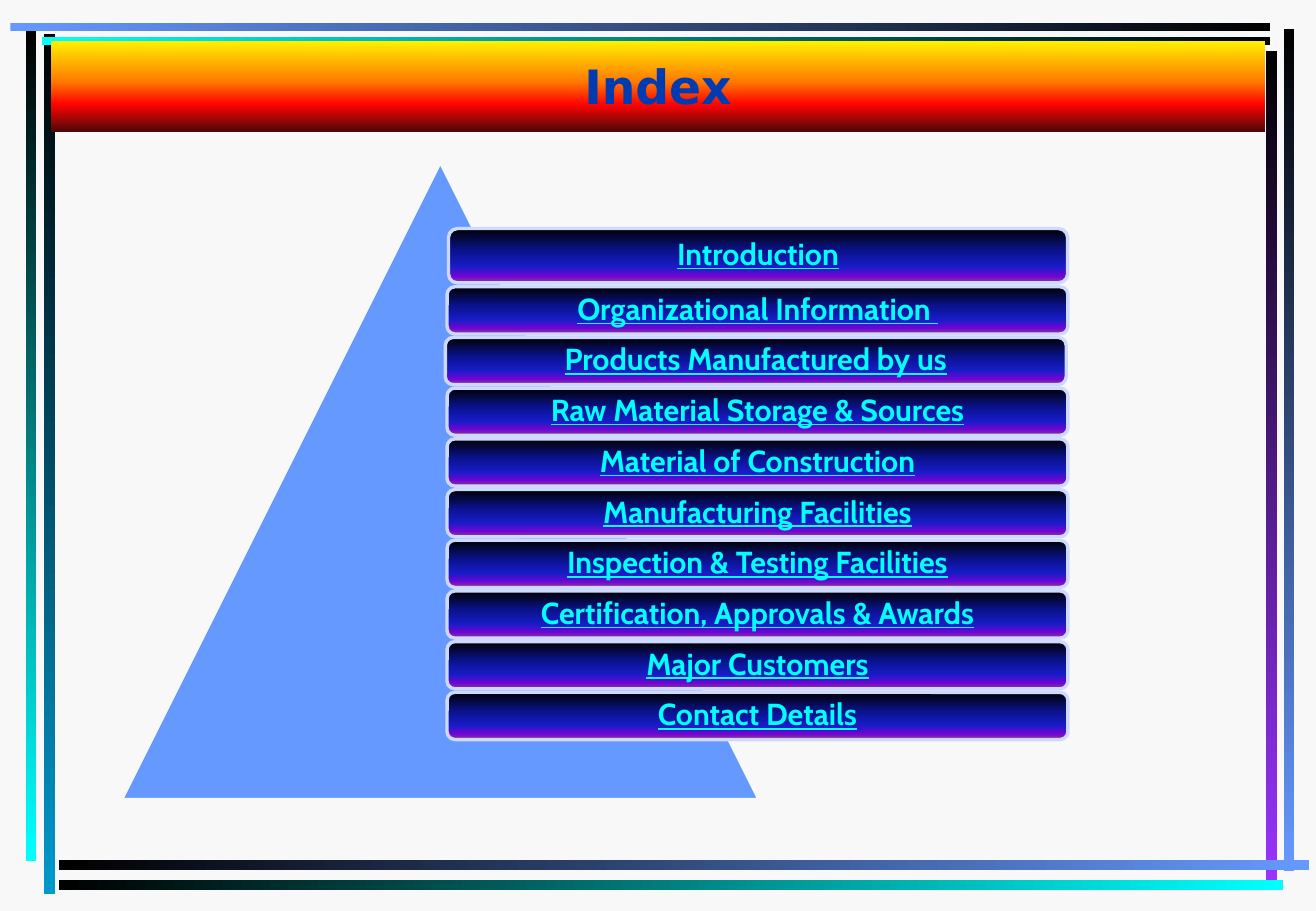
from lxml.etree import SubElement
from pptx import Presentation
from pptx.dml.color import RGBColor
from pptx.enum.shapes import MSO_SHAPE as SHAPE
from pptx.enum.text import MSO_ANCHOR, PP_ALIGN
from pptx.oxml.ns import qn
from pptx.util import Pt

DOWN, ACROSS = 270, 0
MARGIN_SIDES = ("margin_left", "margin_top", "margin_right", "margin_bottom")


def add_panel(kind, box, stops, angle=DOWN, border=None):
    """Add a shape filled with (position, colour) stops, or plainly if there is only one."""
    panel = slide.shapes.add_shape(kind, *[Pt(length) for length in box])
    panel.shadow.inherit = False
    if len(stops) == 1:
        panel.fill.solid()
        panel.fill.fore_color.rgb = RGBColor.from_string(stops[0][1])
    else:
        panel.fill.gradient()
        panel.fill.gradient_angle = angle
        stop_list = panel._element.spPr.find(qn("a:gradFill")).find(qn("a:gsLst"))
        for old_stop in list(stop_list):
            stop_list.remove(old_stop)
        for position, colour in stops:
            stop = SubElement(stop_list, qn("a:gs"), pos=str(position * 1000))
            SubElement(stop, qn("a:srgbClr"), val=colour)
    if border:
        panel.line.color.rgb = RGBColor.from_string(border)
        panel.line.width = Pt(2)
    else:
        panel.line.fill.background()
    return panel


def write_centred(panel, text, colour, line_spacing, font_format):
    frame = panel.text_frame
    frame.word_wrap = True
    frame.vertical_anchor = MSO_ANCHOR.MIDDLE
    for side in MARGIN_SIDES:
        setattr(frame, side, Pt(5))
    paragraph = frame.paragraphs[0]
    paragraph.alignment = PP_ALIGN.CENTER
    paragraph.line_spacing = line_spacing
    run = paragraph.add_run()
    run.text = text
    run.font.color.rgb = RGBColor.from_string(colour)
    for attribute, value in font_format.items():
        setattr(run.font, attribute, value)


prs = Presentation()
prs.slide_width, prs.slide_height = Pt(780), Pt(540)
slide = prs.slides.add_slide(prs.slide_layouts[6])
slide.background.fill.solid()
slide.background.fill.fore_color.rgb = RGBColor.from_string("F8F8F8")

# Frame of coloured bars
frame_bars = [
    ((26, 20, 6.5, 510), "000000", "0099CC", DOWN),
    ((15.2, 18, 6.2, 492.5), "000000", "00FFFF", DOWN),
    ((761, 17.2, 6, 499), "000000", "6699FF", DOWN),
    ((750.4, 30.2, 6.5, 492), "000000", "9933FF", DOWN),
    ((35, 510, 741.2, 5.8), "000000", "6699FF", ACROSS),
    ((35, 521.7, 725.2, 6), "000000", "00FFFF", ACROSS),
    ((25, 22, 727.8, 4.7), "00FFFF", "000000", ACROSS),
    ((6.2, 13.6, 746.5, 4.9), "6699FF", "000000", ACROSS),
]
for box, start, end, angle in frame_bars:
    add_panel(SHAPE.RECTANGLE, box, [(0, start), (100, end)], angle)

# Title band
title = add_panel(SHAPE.RECTANGLE, (30, 24, 720, 54),
                  [(0, "FFF200"), (45, "FF7A00"), (70, "FF0300"), (100, "4D0808")])
write_centred(title, "Index", "003BB2", 1.0,
              {"name": "DejaVu Sans", "size": Pt(28), "bold": True})

# Pyramid with the list of topics
add_panel(SHAPE.ISOSCELES_TRIANGLE, (72, 96, 378, 378), [(0, "6699FF")], border="F8F8F8")

TOPIC_STOPS = [(0, "000000"), (40, "0A128C"), (70, "181CC7"), (88, "7005D4"), (100, "8C3D91")]
TOPIC_FONT = {"name": "Cabin", "size": Pt(18), "bold": True, "underline": True}
FIRST_TOP, SECOND_TOP, PITCH = 135.5, 170, 30.05
topics = [
    "Introduction",
    "Organizational Information ",
    "Products Manufactured by us",
    "Raw Material Storage & Sources",
    "Material of Construction",
    "Manufacturing Facilities",
    "Inspection & Testing Facilities",
    "Certification, Approvals & Awards",
    "Major Customers",
    "Contact Details",
]
special_boxes = {0: (265.8, FIRST_TOP, 367, 32.2),
                 2: (264, SECOND_TOP + PITCH, 368, 28)}
for index, topic in enumerate(topics):
    box = special_boxes.get(index, (265, SECOND_TOP + (index - 1) * PITCH, 368, 28))
    button = add_panel(SHAPE.FLOWCHART_ALTERNATE_PROCESS, box, TOPIC_STOPS, border="CED9FF")
    write_centred(button, topic, "00FFFF", 0.9, TOPIC_FONT)

prs.save("out.pptx")
